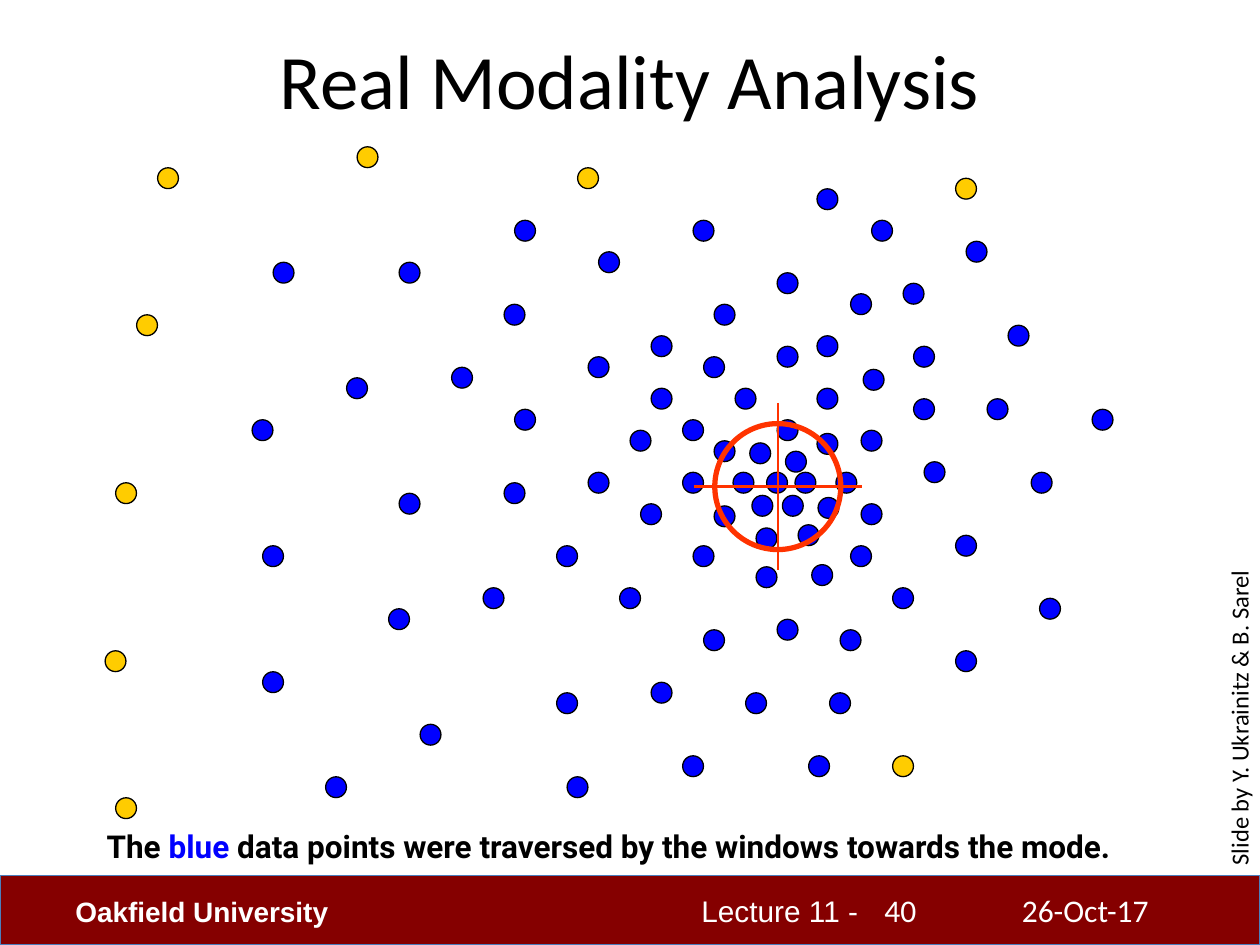
from pptx import Presentation
from pptx.dml.color import RGBColor
from pptx.enum.shapes import MSO_CONNECTOR as Connector, MSO_SHAPE as Shape
from pptx.enum.text import MSO_ANCHOR as Anchor, PP_ALIGN as Align
from pptx.oxml.ns import qn
from pptx.util import Cm, Pt
from lxml.etree import SubElement

BLACK, WHITE, BLUE, YELLOW = "000000", "FFFFFF", "0000FF", "FFCC00"
MAROON, BAND_EDGE, TARGET_RED = "850000", "4B7EBC", "FF3300"

GRID = 2.54 / 12  # the data points sit on twelfths of an inch
DOT = 0.42

# (column, row) of each data point, in grid steps from the plot's corner
TRAVERSED = [
    (63, 31), (65.7, 31), (64.8, 29), (61.4, 28.2), (64.5, 33.2), (61.6, 33.2),
    (67.9, 33.4), (59.8, 31), (69.6, 31), (67.8, 27.3), (64, 26), (66, 36),
    (62, 36.3), (58, 34.2), (55, 31), (58, 28), (72, 34), (71, 38),
    (67.3, 39.8), (62, 40), (56, 38), (51, 34), (50, 27), (55, 26),
    (60, 23), (67.8, 23), (64, 19), (52, 23), (57, 20), (64, 12),
    (58, 15), (67.8, 18), (67.8, 4), (71, 14), (72.2, 21.2), (72, 27),
    (77, 24), (77, 19), (76, 13), (73, 7), (82, 9), (86, 17),
    (78, 30), (84, 24), (94, 25), (81, 37), (88.2, 31), (75, 42),
    (89, 43), (81, 48), (70, 46), (64, 45), (69, 52), (67, 58),
    (61, 52), (57, 46), (49, 42), (52, 51), (55, 58), (44, 60),
    (43, 52), (36, 42), (43, 38), (46, 31), (39, 25), (46, 20),
    (52, 18), (47, 10), (56, 7), (39, 7), (38, 15), (33, 21),
    (38, 32), (28, 33), (27, 44), (30, 55), (21, 60), (15, 50),
    (15, 38), (23, 22), (28, 11), (16, 11), (14, 26),
]
UNTOUCHED = [
    (81, 3), (75, 58), (45, 2), (0, 48), (1, 62), (1, 32), (3, 16), (5, 2), (24, 0),
]


def color(hex_value):
    return RGBColor.from_string(hex_value)


def add_run(paragraph, text, size, font, hex_value, bold=False):
    run = paragraph.add_run()
    run.text = text
    run.font.size = Pt(size)
    run.font.name = font
    run.font.bold = bold
    run.font.color.rgb = color(hex_value)


def add_label(slide, box, runs, size, font, bold=False):
    """Place one line of text; runs are (text, colour) pairs."""
    label = slide.shapes.add_textbox(*map(Cm, box))
    label.text_frame.word_wrap = True
    for text, hex_value in runs:
        add_run(label.text_frame.paragraphs[0], text, size, font, hex_value, bold)
    return label


def add_outlined(slide, preset, box, fill, edge, weight):
    outlined = slide.shapes.add_shape(preset, *map(Cm, box))
    outlined.shadow.inherit = False
    if fill:
        outlined.fill.solid()
        outlined.fill.fore_color.rgb = color(fill)
    else:
        outlined.fill.background()
    outlined.line.color.rgb = color(edge)
    outlined.line.width = Pt(weight)


def add_title(slide, box, text):
    title = slide.shapes.title
    title.left, title.top, title.width, title.height = map(Cm, box)
    frame = title.text_frame
    frame.vertical_anchor = Anchor.MIDDLE
    frame.paragraphs[0].alignment = Align.CENTER
    add_run(frame.paragraphs[0], text, 44, "Calibri", BLACK)


def add_data_points(slide, left, top):
    for points, fill in ((TRAVERSED, BLUE), (UNTOUCHED, YELLOW)):
        for column, row in points:
            box = (left + column * GRID, top + row * GRID, DOT, DOT)
            add_outlined(slide, Shape.OVAL, box, fill, BLACK, 0.75)


def add_target(slide, x, y, radius, arm):
    """Mark the mode with a circle and a cross-hair centred on x, y."""
    circle = (x - radius, y - radius, 2 * radius, 2 * radius)
    add_outlined(slide, Shape.OVAL, circle, None, TARGET_RED, 3)
    for dx, dy in ((0, arm), (arm, 0)):
        ends = (x - dx, y - dy, x + dx, y + dy)
        hair = slide.shapes.add_connector(Connector.STRAIGHT, *map(Cm, ends))
        hair.line.color.rgb = color(TARGET_RED)
        hair.line.width = Pt(1.5)
        SubElement(hair._element.spPr, qn("a:effectLst"))


def add_footer(slide, left, top, width, height):
    add_outlined(slide, Shape.RECTANGLE, (left, top, width, height), MAROON, BAND_EDGE, 0.75)
    entries = [
        ("Lecture 11 -", 13.89, 0.23, 4.2, 17, "Arial", False),
        ("Oakfield University", 1.27, 0.25, 5.92, 16, "Arial", True),
        ("26-Oct-17", 20.35, 0.18, 4.42, 18, "Calibri", False),
        ("40", 17.58, 0.18, 2.79, 18, "Calibri", False),
    ]
    for text, dx, dy, entry_width, size, font, bold in entries:
        box = (left + dx, top + dy, entry_width, 1.02)
        add_label(slide, box, [(text, WHITE)], size, font, bold)


def main():
    deck = Presentation()
    deck.slide_width, deck.slide_height = Cm(25.4), Cm(19.05)
    slide = deck.slides.add_slide(deck.slide_layouts[5])

    add_footer(slide, 0, 17.65, 25.4, 1.4)
    add_data_points(slide, 2.12, 2.96)
    add_target(slide, 15.68, 9.81, 1.27, 1.69)
    caption = [
        ("The ", BLACK),
        ("blue ", BLUE),
        ("data points were traversed by the windows towards the mode.", BLACK),
    ]
    add_label(slide, (1.9, 16.54, 22.17, 1.02), caption, 18, "Roboto", bold=True)
    credit = add_label(slide, (21.16, 13.44, 7.65, 0.86),
                       [("Slide by Y. Ukrainitz & B. Sarel", BLACK)], 14, "Calibri")
    credit.rotation = 270
    add_title(slide, (1.27, 0, 22.86, 3.18), "Real Modality Analysis")

    deck.save("out.pptx")


if __name__ == "__main__":
    main()
